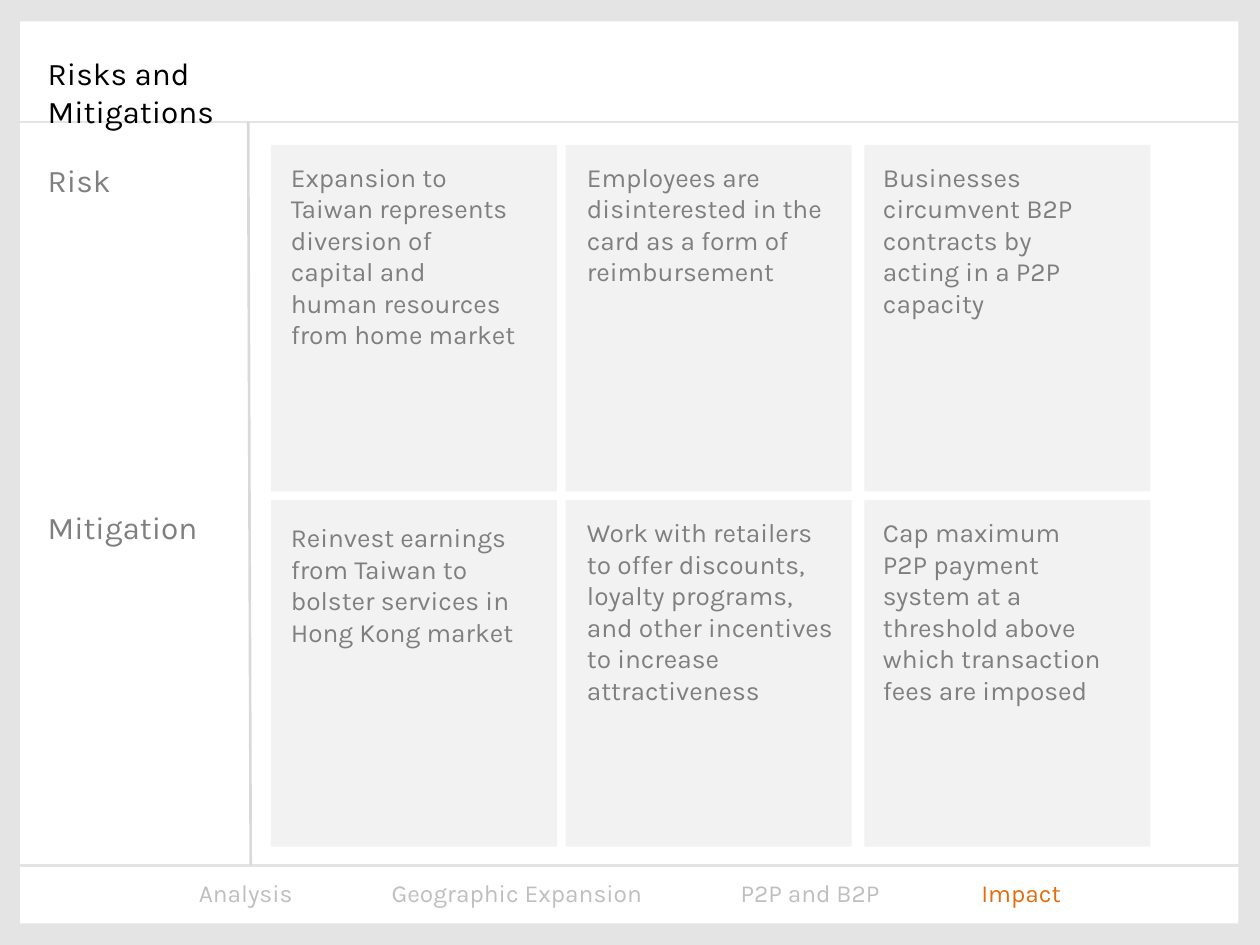
from lxml import etree
from pptx import Presentation
from pptx.dml.color import RGBColor
from pptx.enum import shapes, text
from pptx.oxml import ns
from pptx.util import Inches, Pt

GREY = "7F7F7F"
PALE = "E4E4E4"
ROWS = [("Risk", 1.15), ("Mitigation", 3.97)]
# Card left, text left, text width, then (text top, text) for each row
CARDS = [
    (2.15, 2.21, 2, [
        (1.23, "Expansion to Taiwan represents diversion of capital and "
               "human resources from home market"),
        (4.09, "Reinvest earnings from Taiwan to bolster services in "
               "Hong Kong market")]),
    (4.49, 4.56, 2.18, [
        (1.23, "Employees are disinterested in the card as a form "
               "of reimbursement"),
        (4.05, "Work with retailers\n"
               "to offer discounts, loyalty programs,\n"
               "and other incentives to increase attractiveness")]),
    (6.86, 6.91, 2, [
        (1.23, "Businesses circumvent B2P contracts by acting in a P2P "
               "capacity"),
        (4.05, "Cap maximum P2P payment system at a threshold above which "
               "transaction fees are imposed")]),
]
STEPS = [("Analysis", 1.48), ("Geographic Expansion", 3.01),
         ("P2P and B2P", 5.78), ("Impact", 7.69)]


def rgb(code):
    return RGBColor.from_string(code)


def add_rect(slide, x, y, w, h, fill):
    box = slide.shapes.add_shape(shapes.MSO_SHAPE.RECTANGLE, Inches(x),
                                 Inches(y), Inches(w), Inches(h))
    box.shadow.inherit = False
    box.fill.solid()
    box.fill.fore_color.rgb = rgb(fill)
    box.line.fill.background()


def add_line(slide, x1, y1, x2, y2, color):
    line = slide.shapes.add_connector(shapes.MSO_CONNECTOR.STRAIGHT,
                                      Inches(x1), Inches(y1),
                                      Inches(x2), Inches(y2))
    line.line.color.rgb = rgb(color)
    line.line.width = Pt(1.5)
    etree.SubElement(line._element.spPr, ns.qn("a:effectLst"))


def style(font, size, color):
    font.name = "Karla"
    font.size = Pt(size)
    font.color.rgb = rgb(color)


def add_text(slide, words, x, y, w, h, size=15, color=GREY):
    box = slide.shapes.add_textbox(Inches(x), Inches(y), Inches(w), Inches(h))
    frame = box.text_frame
    frame.word_wrap = True
    frame.auto_size = text.MSO_AUTO_SIZE.SHAPE_TO_FIT_TEXT
    frame.text = words
    for para in frame.paragraphs:
        for run in para.runs:
            style(run.font, size, color)
    return frame


def add_steps(slide):
    """Footer with one tab stop for each step; the last step is current."""
    para = add_text(slide, "", 0, 6.92, 10, 0.34).paragraphs[0]
    tabs = etree.SubElement(para._p.get_or_add_pPr(), ns.qn("a:tabLst"))
    for name, pos in STEPS:
        etree.SubElement(tabs, ns.qn("a:tab"), pos=str(Inches(pos)), algn="l")
        run = para.add_run()
        run.text = "\t" + name
        style(run.font, 14, "E46C0A" if name == "Impact" else "BFBFBF")


def main():
    deck = Presentation()
    deck.slide_width, deck.slide_height = Inches(10), Inches(7.5)
    slide = deck.slides.add_slide(deck.slide_layouts[6])
    slide.background.fill.solid()
    slide.background.fill.fore_color.rgb = rgb(PALE)

    add_rect(slide, 0.16, 0.17, 9.67, 7.16, "FFFFFF")
    for y in (6.87, 0.97):
        add_line(slide, 0, y, 10, y, PALE)
    add_steps(slide)
    add_text(slide, "Risks and Mitigations", 0.28, 0.38, 2.48, 0.4,
             size=18, color="000000")
    add_line(slide, 1.97, 0.97, 1.99, 6.87, "D9D9D9")
    for (name, _), y in zip(ROWS, (1.23, 3.98)):
        add_text(slide, name, 0.28, y, 1.5, 0.4, size=18)
    for left, x, w, notes in CARDS:
        for (_, top), (y, words) in zip(ROWS, notes):
            add_rect(slide, left, top, 2.27, 2.75, "F2F2F2")
            add_text(slide, words, x, y, w, 1.36)
    deck.save("out.pptx")


if __name__ == "__main__":
    main()
